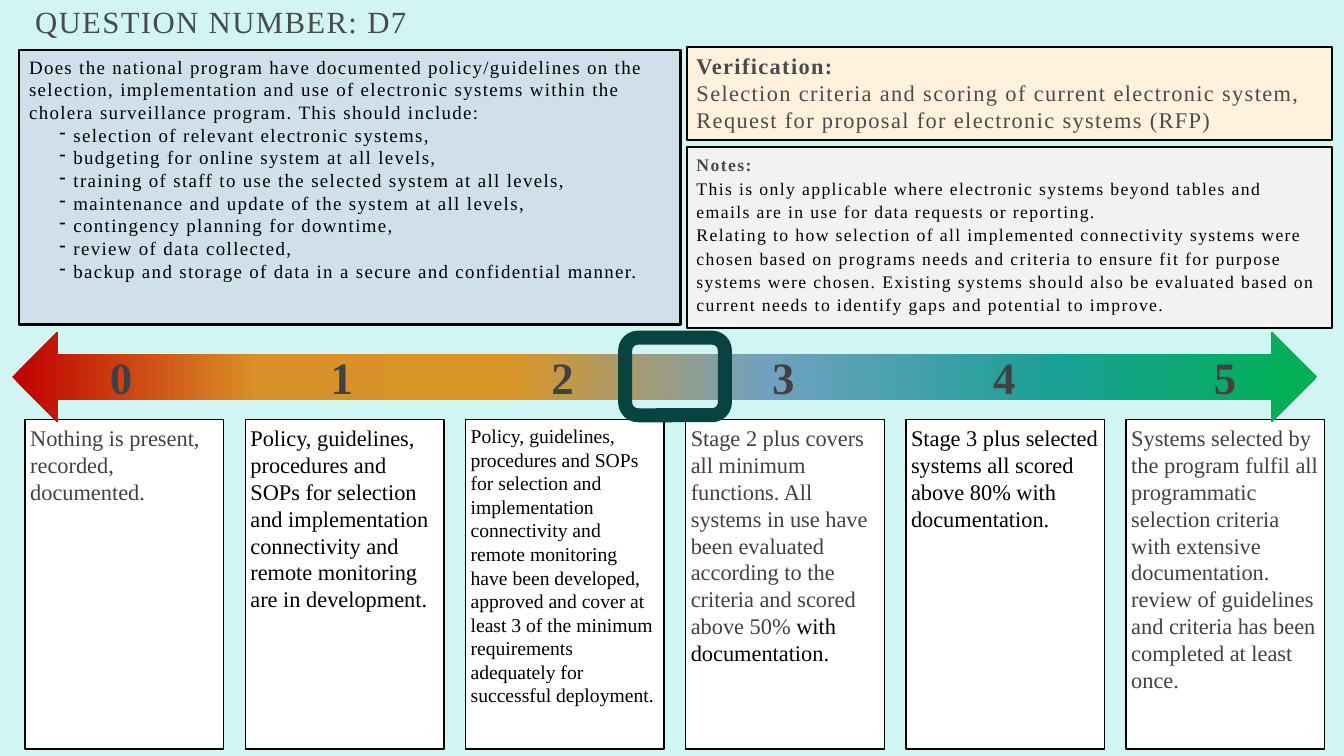
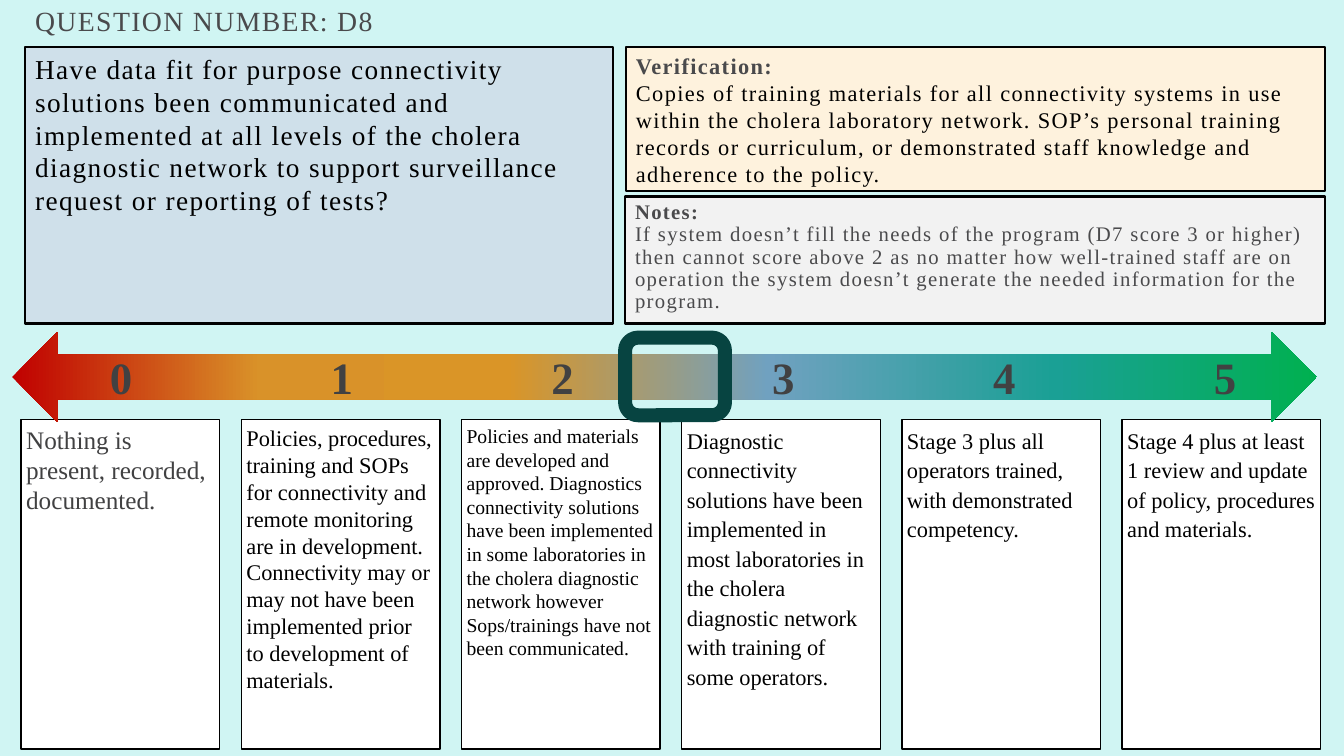
"""Build two scoring slides, each with a question, its evidence and a 0 to 5 scale."""
from dataclasses import dataclass

from lxml.etree import SubElement
from pptx import Presentation
from pptx.dml.color import RGBColor
from pptx.enum.shapes import MSO_SHAPE
from pptx.enum.text import MSO_ANCHOR, PP_ALIGN
from pptx.oxml.ns import qn
from pptx.presentation import Presentation as Deck
from pptx.shapes.autoshape import Shape
from pptx.shapes.shapetree import GroupShapes, SlideShapes
from pptx.text.text import TextFrame
from pptx.util import Inches, Pt

FONT = "Times New Roman"
BACKGROUND = "D0F5F3"
QUESTION_FILL = "CFE0EA"
VERIFICATION_FILL = "FEF2DD"
NOTES_FILL = "F2F2F2"
WHITE = "FFFFFF"
BLACK = "000000"
GREY = "4A4A4C"
DARK_GREY = "414142"
MARKER = "074441"
SCALE_STOPS = [(0, "C00000"), (19, "D99229"), (38, "DA9527"),
               (58, "70A1C0"), (80, "1AA095"), (100, "00B050")]
SCORE_COUNT = 6
SCORE_LEFT, SCORE_PITCH = 0.84, 2.19
CARD_PITCH = 10.92 / (SCORE_COUNT - 1)

Shapes = SlideShapes | GroupShapes


@dataclass(frozen=True)
class Box:
    left: float
    top: float
    width: float
    height: float


@dataclass(frozen=True)
class Span:
    text: str
    color: str = BLACK
    bold: bool = False


@dataclass(frozen=True)
class Line:
    spans: list[Span]
    bulleted: bool = False


@dataclass(frozen=True)
class TextStyle:
    size: float
    tracking: int = 0
    spacing: float | None = None
    space_after: int = 0
    alignment: PP_ALIGN = PP_ALIGN.LEFT


@dataclass(frozen=True)
class Panel:
    box: Box
    fill: str
    size: float
    lines: list[Line]
    spacing: float | None = None


@dataclass(frozen=True)
class Card:
    spans: list[Span]
    size: float = 16
    spacing: float | None = None


@dataclass(frozen=True)
class QuestionSlide:
    title: str
    title_size: float
    panels: list[Panel]
    cards_left: float
    cards: list[Card]


def rgb(color: str) -> RGBColor:
    return RGBColor.from_string(color)


def line(text: str, color: str = BLACK, bold: bool = False) -> Line:
    return Line([Span(text, color, bold)])


def bullet(text: str) -> Line:
    return Line([Span(text)], bulleted=True)


def write_text(text_frame: TextFrame, lines: list[Line], style: TextStyle) -> None:
    text_frame.word_wrap = True
    for index, item in enumerate(lines):
        paragraph = text_frame.paragraphs[0] if index == 0 else text_frame.add_paragraph()
        paragraph.alignment = style.alignment
        paragraph.line_spacing = style.spacing
        paragraph.space_after = Pt(style.space_after)
        if item.bulleted:
            properties = paragraph._p.get_or_add_pPr()
            properties.set("marL", str(Inches(0.44)))
            properties.set("indent", str(Inches(-0.14)))
            SubElement(properties, qn("a:buChar")).set("char", "-")
        for span in item.spans:
            run = paragraph.add_run()
            run.text = span.text
            run.font.name = FONT
            run.font.size = Pt(style.size)
            run.font.bold = span.bold
            run.font.color.rgb = rgb(span.color)
            if style.tracking:
                run._r.get_or_add_rPr().set("spc", str(style.tracking))


def add_text(shapes: Shapes, box: Box, text: Line, style: TextStyle,
             anchor: MSO_ANCHOR = MSO_ANCHOR.TOP) -> None:
    text_box = shapes.add_textbox(Inches(box.left), Inches(box.top),
                                  Inches(box.width), Inches(box.height))
    text_box.text_frame.vertical_anchor = anchor
    write_text(text_box.text_frame, [text], style)


def add_outline(shapes: Shapes, kind: MSO_SHAPE, box: Box, fill: str | None = None,
                border: str | None = None, border_width: float = 1) -> Shape:
    shape = shapes.add_shape(kind, Inches(box.left), Inches(box.top),
                             Inches(box.width), Inches(box.height))
    shape.shadow.inherit = False
    if fill:
        shape.fill.solid()
        shape.fill.fore_color.rgb = rgb(fill)
    else:
        shape.fill.background()
    if border:
        shape.line.color.rgb = rgb(border)
        shape.line.width = Pt(border_width)
    else:
        shape.line.fill.background()
    return shape


def add_panel(shapes: Shapes, panel: Panel) -> None:
    shape = add_outline(shapes, MSO_SHAPE.RECTANGLE, panel.box, panel.fill, BLACK, 1.5)
    shape.text_frame.vertical_anchor = MSO_ANCHOR.TOP
    write_text(shape.text_frame, panel.lines, TextStyle(panel.size, 100, panel.spacing))


def add_cards(shapes: Shapes, left: float, cards: list[Card]) -> None:
    for index, card in enumerate(cards):
        box = Box(left + index * CARD_PITCH, 4.16, 1.97, 3.27)
        shape = add_outline(shapes, MSO_SHAPE.RECTANGLE, box, WHITE, BLACK)
        text_frame = shape.text_frame
        text_frame.vertical_anchor = MSO_ANCHOR.TOP
        text_frame.margin_left = text_frame.margin_right = Inches(0.05)
        text_frame.margin_top = text_frame.margin_bottom = Inches(0.05)
        write_text(text_frame, [Line(card.spans)],
                   TextStyle(card.size, spacing=card.spacing, space_after=2))


def add_scale(shapes: Shapes) -> None:
    arrow = add_outline(shapes, MSO_SHAPE.LEFT_RIGHT_ARROW, Box(0.12, 3.29, 12.94, 0.9))
    arrow.fill.gradient()
    arrow.fill.gradient_angle = 0
    stop_list = arrow._element.spPr.find(qn("a:gradFill")).find(qn("a:gsLst"))
    for stop in list(stop_list):
        stop_list.remove(stop)
    for position, color in SCALE_STOPS:
        stop = SubElement(stop_list, qn("a:gs"))
        stop.set("pos", str(position * 1000))
        SubElement(stop, qn("a:srgbClr")).set("val", color)
    for score in range(SCORE_COUNT):
        add_text(shapes, Box(SCORE_LEFT + score * SCORE_PITCH, 3.59, 0.72, 0.29),
                 line(str(score), DARK_GREY, True),
                 TextStyle(32, alignment=PP_ALIGN.CENTER), MSO_ANCHOR.MIDDLE)


def add_question_slide(presentation: Deck, content: QuestionSlide) -> None:
    slide = presentation.slides.add_slide(presentation.slide_layouts[6])
    slide.background.fill.solid()
    slide.background.fill.fore_color.rgb = rgb(BACKGROUND)
    add_text(slide.shapes, Box(0.25, 0.05, 5.64, 0.45), line(content.title, GREY),
             TextStyle(content.title_size, 100, 0.8))
    add_cards(slide.shapes.add_group_shape().shapes, content.cards_left, content.cards)
    for panel in content.panels:
        add_panel(slide.shapes, panel)
    add_scale(slide.shapes.add_group_shape().shapes)
    add_outline(slide.shapes, MSO_SHAPE.ROUNDED_RECTANGLE, Box(6.2, 3.35, 0.99, 0.77),
                border=MARKER, border_width=10)


QUESTIONS = [
    QuestionSlide(
        "QUESTION NUMBER: D7", 22,
        [
            Panel(Box(0.19, 0.5, 6.56, 2.72), QUESTION_FILL, 13.5, [
                line("Does the national program have documented policy/guidelines on the selection, "
                     "implementation and use of electronic systems within the cholera surveillance "
                     "program. This should include:"),
                bullet("selection of relevant electronic systems,"),
                bullet("budgeting for online system at all levels,"),
                bullet("training of staff to use the selected system at all levels,"),
                bullet("maintenance and update of the system at all levels,"),
                bullet("contingency planning for downtime,"),
                bullet("review of data collected,"),
                bullet("backup and storage of data in a secure and confidential manner."),
            ]),
            Panel(Box(6.81, 1.46, 6.4, 1.79), NOTES_FILL, 12.6, [
                line("Notes:", GREY, True),
                line("This is only applicable where electronic systems beyond tables and emails are "
                     "in use for data requests or reporting."),
                line("Relating to how selection of all implemented connectivity systems were chosen "
                     "based on programs needs and criteria to ensure fit for purpose systems were "
                     "chosen. Existing systems should also be evaluated based on current needs to "
                     "identify gaps and potential to improve."),
            ], 1.1),
            Panel(Box(6.81, 0.47, 6.4, 0.92), VERIFICATION_FILL, 16, [
                line("Verification:", GREY, True),
                line("Selection criteria and scoring of current electronic system,", GREY),
                line("Request for proposal for electronic systems (RFP)", GREY),
            ]),
        ],
        0.25,
        [
            Card([Span("Nothing is present, recorded, documented.", DARK_GREY)]),
            Card([Span("Policy, guidelines, procedures and SOPs for selection and implementation "
                       "connectivity and remote monitoring are in development.")]),
            Card([Span("Policy, guidelines, procedures and SOPs for selection and implementation "
                       "connectivity and remote monitoring have been developed, approved and cover "
                       "at least 3 of the minimum requirements adequately for successful "
                       "deployment.")], 14),
            Card([Span("Stage 2 plus covers all minimum functions. All systems in use have been "
                       "evaluated according to the criteria and scored above 50% ", DARK_GREY),
                  Span("with documentation.")]),
            Card([Span("Stage 3 plus selected systems all scored above 80% with documentation.")]),
            Card([Span("Systems selected by the program fulfil all programmatic selection criteria "
                       "with extensive documentation. review of guidelines and criteria has been "
                       "completed at least once.", DARK_GREY)]),
        ],
    ),
    QuestionSlide(
        "QUESTION NUMBER: D8", 19.8,
        [
            Panel(Box(0.25, 0.47, 5.83, 2.74), QUESTION_FILL, 19.5, [
                line("Have data fit for purpose connectivity solutions been communicated and "
                     "implemented at all levels of the cholera diagnostic network to support "
                     "surveillance request or reporting of tests?"),
            ]),
            Panel(Box(6.21, 0.47, 6.93, 1.43), VERIFICATION_FILL, 16, [
                line("Verification:", GREY, True),
                line("Copies of training materials for all connectivity systems in use within the "
                     "cholera laboratory network. SOP’s personal training records or curriculum, or "
                     "demonstrated staff knowledge and adherence to the policy."),
            ]),
            Panel(Box(6.2, 1.95, 6.94, 1.26), NOTES_FILL, 14.8, [
                line("Notes:", GREY, True),
                line("If system doesn’t fill the needs of the program (D7 score 3 or higher) then "
                     "cannot score above 2 as no matter how well-trained staff are on operation the "
                     "system doesn’t generate the needed information for the program.", GREY),
            ], 0.9),
        ],
        0.21,
        [
            Card([Span("Nothing is present, recorded, documented.", DARK_GREY)], 18),
            Card([Span("Policies, procedures, training and SOPs for connectivity and remote "
                       "monitoring are in development. Connectivity may or may not have been "
                       "implemented prior to development of materials.")]),
            Card([Span("Policies and materials are developed and approved. Diagnostics connectivity "
                       "solutions have been implemented in some laboratories in the cholera "
                       "diagnostic network however Sops/trainings have not been communicated.")], 14),
            Card([Span("Diagnostic connectivity solutions have been implemented in most laboratories "
                       "in the cholera diagnostic network with training of some operators.")],
                 spacing=1.1),
            Card([Span("Stage 3 plus all operators trained, with demonstrated competency.")],
                 spacing=1.1),
            Card([Span("Stage 4 plus at least 1 review and update of policy, procedures and "
                       "materials.")], spacing=1.1),
        ],
    ),
]


def main() -> None:
    presentation = Presentation()
    presentation.slide_width = Inches(13.33)
    presentation.slide_height = Inches(7.5)
    for content in QUESTIONS:
        add_question_slide(presentation, content)
    presentation.save("out.pptx")


if __name__ == "__main__":
    main()
